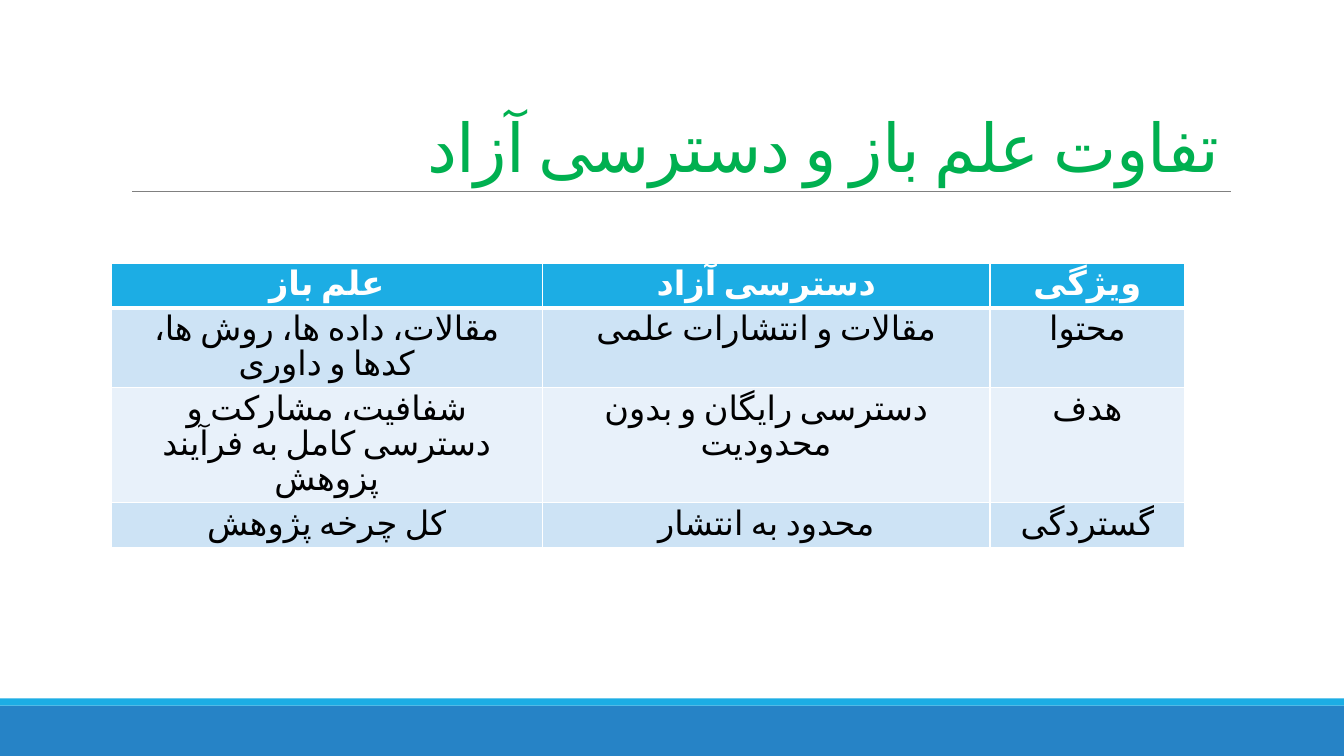
from dataclasses import dataclass

from lxml.etree import SubElement
from pptx import Presentation
from pptx.dml.color import RGBColor
from pptx.enum.shapes import MSO_CONNECTOR, MSO_SHAPE
from pptx.enum.text import MSO_ANCHOR, PP_ALIGN
from pptx.oxml.ns import qn
from pptx.util import Inches, Pt


@dataclass(frozen=True)
class Theme:
    font: str = "Calibri"
    title_size: int = 48
    table_size: int = 24
    line_spacing: float = 0.85
    title: str = "00B050"
    rule: str = "808080"
    accent: str = "1CADE4"
    footer: str = "2683C6"
    odd_row: str = "CDE3F5"
    even_row: str = "E8F1FA"
    white: str = "FFFFFF"
    black: str = "000000"


theme = Theme()


def write_persian(text_frame, text, alignment, font_format):
    """Write one right-to-left paragraph and return its run properties."""
    paragraph = text_frame.paragraphs[0]
    paragraph.alignment = alignment
    paragraph.line_spacing = theme.line_spacing
    paragraph._p.get_or_add_pPr().set("rtl", "1")
    run = paragraph.add_run()
    run.text = text
    color = font_format["color"]
    for name, value in font_format.items():
        if name != "color":
            setattr(run.font, name, value)
    run.font.color.rgb = RGBColor.from_string(color)
    properties = run._r.get_or_add_rPr()
    properties.set("lang", "fa-IR")
    SubElement(properties, qn("a:cs"), typeface=theme.font)
    return properties


def add_border(cell, side, width):
    """Add one white border; sides must come in the order L, R, T, B."""
    properties = cell._tc.get_or_add_tcPr()
    line = SubElement(properties, qn(f"a:ln{side}"), w=str(Pt(width)))
    fill = SubElement(line, qn("a:solidFill"))
    SubElement(fill, qn("a:srgbClr"), val=theme.white)


presentation = Presentation()
presentation.slide_width = Inches(13.33)
presentation.slide_height = Inches(7.5)
slide = presentation.slides.add_slide(presentation.slide_layouts[5])

# Footer bars
for top, height, color in [(7, 0.5, theme.footer), (6.93, 0.07, theme.accent)]:
    bar = slide.shapes.add_shape(
        MSO_SHAPE.RECTANGLE, 0, Inches(top), presentation.slide_width, Inches(height)
    )
    bar.shadow.inherit = False
    bar.fill.solid()
    bar.fill.fore_color.rgb = RGBColor.from_string(color)
    bar.line.fill.background()

# Rule under the title
rule = slide.shapes.add_connector(
    MSO_CONNECTOR.STRAIGHT, Inches(1.31), Inches(1.9), Inches(12.21), Inches(1.9)
)
rule.line.color.rgb = RGBColor.from_string(theme.rule)
rule.line.width = Pt(0.5)
SubElement(rule._element.spPr, qn("a:effectLst"))

# Title
title = slide.shapes.title
title.left, title.top = Inches(1.2), Inches(0.31)
title.width, title.height = Inches(11), Inches(1.59)
title.text_frame.word_wrap = True
title.text_frame.vertical_anchor = MSO_ANCHOR.BOTTOM
title_format = {"name": theme.font, "size": Pt(theme.title_size), "color": theme.title}
title_properties = write_persian(
    title.text_frame, "تفاوت علم باز و دسترسی آزاد", PP_ALIGN.RIGHT, title_format
)
title_properties.set("spc", "-50")

# Comparison table
rows = [
    ["علم باز", "دسترسی آزاد", "ویژگی"],
    ["مقالات، داده ها، روش ها، کدها و داوری", "مقالات و انتشارات علمی", "محتوا"],
    [
        "شفافیت، مشارکت و دسترسی کامل به فرآیند پزوهش",
        "دسترسی رایگان و بدون محدودیت",
        "هدف",
    ],
    ["کل چرخه پژوهش", "محدود به انتشار", "گستردگی"],
]
column_widths = [4.28, 4.44, 1.93]
row_heights = [0.42, 0.77, 1.1, 0.43]
table = slide.shapes.add_table(
    len(rows), len(column_widths), Inches(1.1), Inches(2.61),
    Inches(sum(column_widths)), Inches(sum(row_heights)),
).table
for column, width in zip(table.columns, column_widths):
    column.width = Inches(width)
for row, height in zip(table.rows, row_heights):
    row.height = Inches(height)

for row_index, texts in enumerate(rows):
    is_header = row_index == 0
    if is_header:
        row_fill = theme.accent
    else:
        row_fill = theme.odd_row if row_index % 2 else theme.even_row
    cell_format = {
        "name": theme.font,
        "size": Pt(theme.table_size),
        "bold": is_header,
        "color": theme.white if is_header else theme.black,
    }
    for column_index, text in enumerate(texts):
        cell = table.cell(row_index, column_index)
        cell.margin_left = cell.margin_right = Inches(0.2)
        write_persian(cell.text_frame, text, PP_ALIGN.CENTER, cell_format)
        border_widths = {
            "L": 1,
            "R": 1,
            "T": 3 if row_index == 1 else 1,
            "B": 3 if is_header else 1,
        }
        for side, width in border_widths.items():
            add_border(cell, side, width)
        cell.fill.solid()
        cell.fill.fore_color.rgb = RGBColor.from_string(row_fill)

presentation.save("out.pptx")
